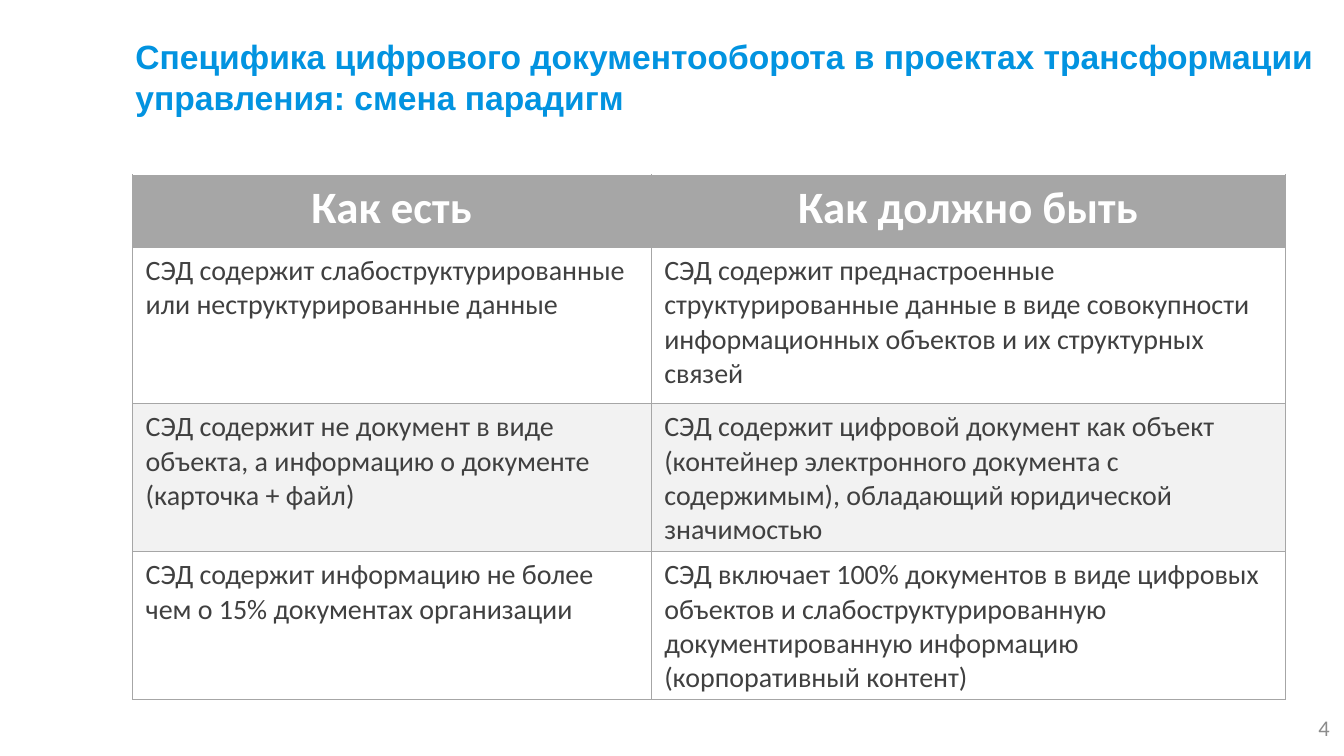
from lxml import etree
from pptx import Presentation
from pptx.dml.color import RGBColor
from pptx.enum.shapes import MSO_SHAPE
from pptx.enum.text import MSO_ANCHOR as ANCHOR, PP_ALIGN as ALIGN
from pptx.oxml.ns import qn
from pptx.util import Cm, Pt

WHITE = RGBColor(0xFF, 0xFF, 0xFF)
BLUE = RGBColor(0x02, 0x93, 0xE0)
GREY = RGBColor(0xA6, 0xA6, 0xA6)
PALE = RGBColor(0xF2, 0xF2, 0xF2)
DARK = RGBColor(0x40, 0x40, 0x40)
NUMBER_GREY = RGBColor(0x8C, 0x8C, 0x8C)


def write(frame, text, font_name, size, color, bold=False, align=ALIGN.LEFT):
    frame.text = text
    frame.word_wrap = True
    paragraph = frame.paragraphs[0]
    paragraph.alignment = align
    font = paragraph.runs[0].font
    font.name, font.size, font.bold = font_name, Pt(size), bold
    font.color.rgb = color


def add_borders(cell, color, width):
    properties = cell._tc.get_or_add_tcPr()
    for index, side in enumerate(("lnL", "lnR", "lnT", "lnB")):
        line = etree.Element(qn(f"a:{side}"), w=str(int(width)))
        fill = etree.SubElement(line, qn("a:solidFill"))
        etree.SubElement(fill, qn("a:srgbClr"), val=str(color))
        properties.insert(index, line)


prs = Presentation()
prs.slide_width, prs.slide_height = Cm(25.4), Cm(14.28)
slide = prs.slides.add_slide(prs.slide_layouts[6])

# Slide number
number = slide.shapes.add_textbox(Cm(19.46), Cm(13.36), Cm(5.92), Cm(0.76))
write(number.text_frame, "4", "Calibri", 12, NUMBER_GREY, align=ALIGN.RIGHT)
number.text_frame.vertical_anchor = ANCHOR.MIDDLE

# Title
title = slide.shapes.add_shape(MSO_SHAPE.RECTANGLE, Cm(2.31), Cm(0.56), Cm(23.09), Cm(1.8))
title.shadow.inherit = False
title.fill.solid()
title.fill.fore_color.rgb = WHITE
title.line.fill.background()
title.text_frame.vertical_anchor = ANCHOR.TOP
write(title.text_frame,
      "Специфика цифрового документооборота в проектах трансформации управления: смена парадигм",
      "Arial", 18, BLUE, bold=True)

# Comparison table
comparison = [
    ("Как есть", "Как должно быть"),
    ("СЭД содержит слабоструктурированные или неструктурированные данные",
     "СЭД содержит преднастроенные структурированные данные в виде совокупности "
     "информационных объектов и их структурных связей"),
    ("СЭД содержит не документ в виде объекта, а информацию о документе (карточка + файл)",
     "СЭД содержит цифровой документ как объект (контейнер электронного документа с "
     "содержимым), обладающий юридической значимостью"),
    ("СЭД содержит информацию не более чем о 15% документах организации",
     "СЭД включает 100% документов в виде цифровых объектов и слабоструктурированную "
     "документированную информацию (корпоративный контент)"),
]
column_widths = [9.8, 11.99]
row_heights = [1.37, 2.95, 2.46, 1.65]
row_fills = [GREY, None, PALE, None]

table = slide.shapes.add_table(
    len(comparison), len(column_widths), Cm(2.5), Cm(3.3),
    Cm(sum(column_widths)), Cm(sum(row_heights))).table
for column, width in zip(table.columns, column_widths):
    column.width = Cm(width)

for row, height, row_fill, texts in zip(table.rows, row_heights, row_fills, comparison):
    row.height = Cm(height)
    for cell, text in zip(row.cells, texts):
        if row_fill is None:
            cell.fill.background()
        else:
            cell.fill.solid()
            cell.fill.fore_color.rgb = row_fill
        add_borders(cell, GREY, Pt(0.25))
        if texts is comparison[0]:
            write(cell.text_frame, text, "Calibri", 24, WHITE, bold=True, align=ALIGN.CENTER)
        else:
            write(cell.text_frame, text, "Calibri", 15, DARK)

prs.save("out.pptx")
